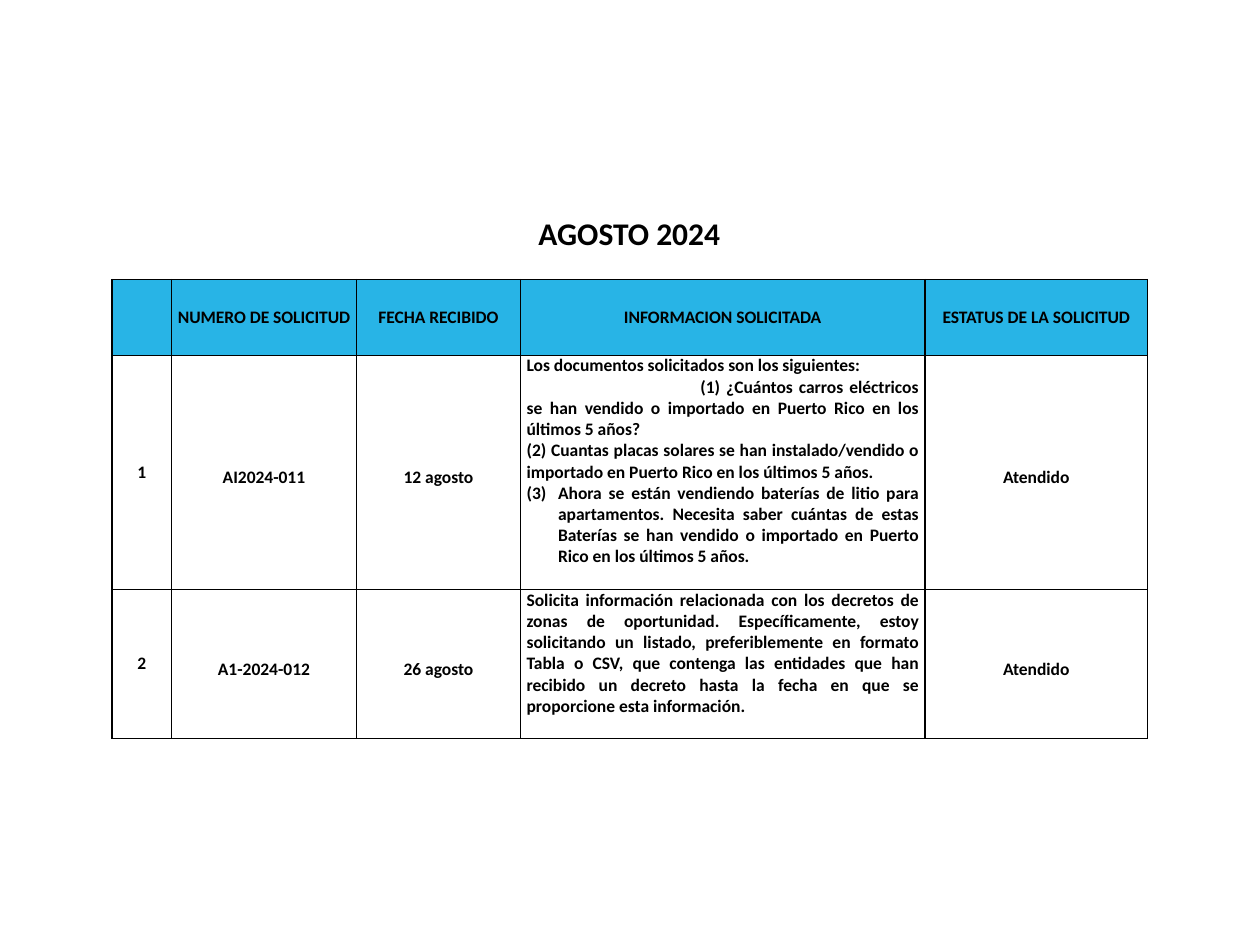
from lxml.etree import SubElement
from pptx import Presentation
from pptx.dml.color import RGBColor
from pptx.enum.text import MSO_ANCHOR as Anchor, PP_ALIGN as Align
from pptx.oxml.ns import qn
from pptx.util import Inches, Pt

COLORS = {"text": "000000", "border": "000000", "header": "28B4E6"}
FONT = "Calibri"
COLUMN_WIDTHS = [0.47, 1.47, 1.3, 3.21, 1.77]
ROW_HEIGHTS = [0.6, 1.86, 1.18]
THICK_COLUMN_EDGES = {0, 3, 4, 5}
THICK_ROW_EDGES = {0, 1, 3}
INFO_COLUMN = 3

HEADERS = ["", "NUMERO DE SOLICITUD", "FECHA RECIBIDO",
           "INFORMACION SOLICITADA", "ESTATUS DE LA SOLICITUD"]
DOCUMENTS = [
    ("Los documentos solicitados son los siguientes:", {}),
    ("(1) ¿Cuántos carros eléctricos se han vendido o importado en Puerto Rico "
     "en los últimos 5 años?", {"indent": 1.38}),
    ("(2) Cuantas placas solares se han instalado/vendido o importado en "
     "Puerto Rico en los últimos 5 años.", {}),
    ("Ahora se están vendiendo baterías de litio para apartamentos. Necesita "
     "saber cuántas de estas Baterías se han vendido o importado en Puerto "
     "Rico en los últimos 5 años.", {"left": 0.25, "indent": -0.25, "number": 3}),
]
DECREES = [
    ("Solicita información relacionada con los decretos de zonas de "
     "oportunidad. Específicamente, estoy solicitando un listado, "
     "preferiblemente en formato Tabla o CSV, que contenga las entidades que "
     "han recibido un decreto hasta la fecha en que se proporcione esta "
     "información.", {}),
]
REQUESTS = [
    ["1", "AI2024-011", "12 agosto", DOCUMENTS, "Atendido"],
    ["2", "A1-2024-012", "26 agosto", DECREES, "Atendido"],
]


def write_text(paragraph, text, size=10, align=Align.CENTER, spacing=None,
               left=0, indent=0, number=None):
    properties = paragraph._p.get_or_add_pPr()
    properties.set("marL", str(Inches(left)))
    properties.set("indent", str(Inches(indent)))
    if number:
        SubElement(properties, qn("a:buFont"), typeface="+mj-lt")
        SubElement(properties, qn("a:buAutoNum"), type="arabicParenBoth",
                   startAt=str(number))
    paragraph.alignment = align
    if spacing:
        paragraph.line_spacing = spacing
    run = paragraph.add_run()
    run.text = text
    run.font.name = FONT
    run.font.size = Pt(size)
    run.font.bold = True
    run.font.color.rgb = RGBColor.from_string(COLORS["text"])


def set_borders(cell, row, column):
    edges = {
        "a:lnL": column in THICK_COLUMN_EDGES,
        "a:lnR": column + 1 in THICK_COLUMN_EDGES,
        "a:lnT": row in THICK_ROW_EDGES,
        "a:lnB": row + 1 in THICK_ROW_EDGES,
    }
    properties = cell._tc.get_or_add_tcPr()
    for tag, thick in edges.items():
        line = SubElement(properties, qn(tag), w=str(Pt(1 if thick else 0.5)))
        fill = SubElement(line, qn("a:solidFill"))
        SubElement(fill, qn("a:srgbClr"), val=COLORS["border"])


def format_cell(cell, row, column):
    cell.margin_left = cell.margin_right = Inches(0.05)
    cell.margin_top = cell.margin_bottom = 0
    is_info = row > 0 and column == INFO_COLUMN
    cell.vertical_anchor = Anchor.TOP if is_info else Anchor.MIDDLE
    set_borders(cell, row, column)
    if row == 0:
        cell.fill.solid()
        cell.fill.fore_color.rgb = RGBColor.from_string(COLORS["header"])
    else:
        cell.fill.background()


def fill_cell(cell, content, row, column):
    frame = cell.text_frame
    if row > 0 and column == INFO_COLUMN:
        for index, (text, layout) in enumerate(content):
            paragraph = frame.add_paragraph() if index else frame.paragraphs[0]
            write_text(paragraph, text, align=Align.JUSTIFY, **layout)
    elif content:
        spacing = 1.5 if row > 0 and column > 0 else None
        write_text(frame.paragraphs[0], content, spacing=spacing)


def add_requests(slide):
    rows = [HEADERS] + REQUESTS
    requests = slide.shapes.add_table(
        len(rows), len(HEADERS), Inches(0.89), Inches(2.22),
        Inches(sum(COLUMN_WIDTHS)), Inches(sum(ROW_HEIGHTS))).table
    requests.horz_banding = False
    for column, width in zip(requests.columns, COLUMN_WIDTHS):
        column.width = Inches(width)
    for row, height in zip(requests.rows, ROW_HEIGHTS):
        row.height = Inches(height)
    for row, contents in enumerate(rows):
        for column, content in enumerate(contents):
            cell = requests.cell(row, column)
            format_cell(cell, row, column)
            fill_cell(cell, content, row, column)


def add_month(slide):
    month = slide.shapes.add_textbox(Inches(1.63), Inches(1.65),
                                     Inches(6.73), Inches(0.4))
    month.text_frame.word_wrap = True
    write_text(month.text_frame.paragraphs[0], "AGOSTO 2024", size=18)


def main():
    deck = Presentation()
    deck.slide_width, deck.slide_height = Inches(10), Inches(7.5)
    slide = deck.slides.add_slide(deck.slide_layouts[6])
    add_requests(slide)
    add_month(slide)
    deck.save("out.pptx")


if __name__ == "__main__":
    main()
